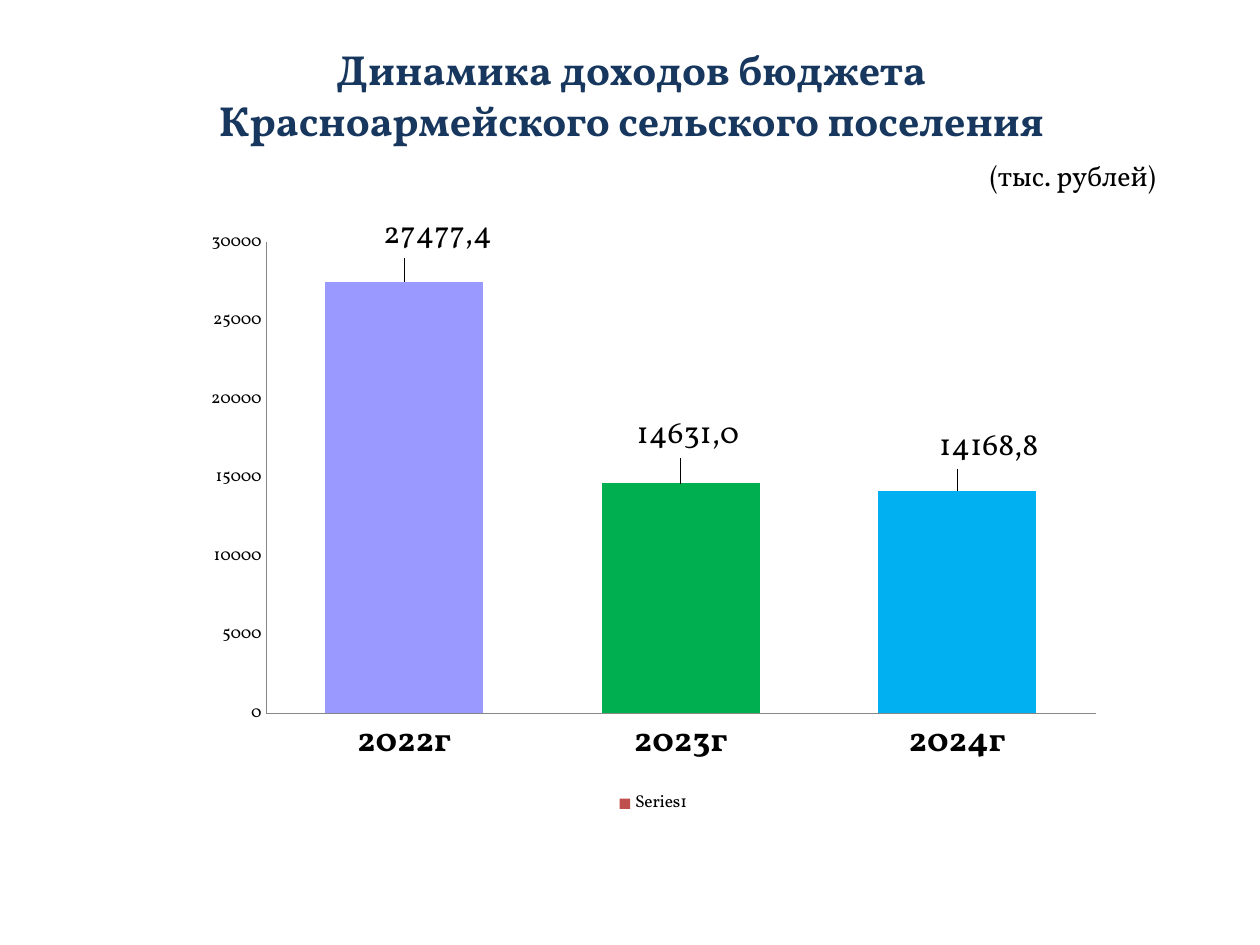
import pptx
import pptx.chart.data
import pptx.dml.color
import pptx.enum.chart
import pptx.enum.text
import pptx.oxml
import pptx.oxml.ns
import pptx.util

Pt = pptx.util.Pt
FONT = "Vollkorn"
ALIGN = pptx.enum.text.PP_ALIGN
CHART_WIDTH, CHART_HEIGHT = 510.5, 351.4
INCOMES = [
    ("2022г", 27477, "27477,4", "9999FF", (19, -11)),
    ("2023г", 14631, "14631,0", "00B050", (4, -12)),
    ("2024г", 14169, "14168,8", "00B0F0", (18, -9.5)),
]
NO_LEADER_LINES = (
    f'<c:extLst {pptx.oxml.ns.nsdecls("c")}>'
    '<c:ext uri="{CE6537A1-D6FC-4f65-9D91-7224C49458BB}" '
    'xmlns:c15="http://schemas.microsoft.com/office/drawing/2012/chart">'
    '<c15:showLeaderLines val="0"/></c:ext></c:extLst>'
)


def color(value):
    return pptx.dml.color.RGBColor.from_string(value)


def paint(fill, value):
    fill.solid()
    fill.fore_color.rgb = color(value)


def style_font(font, size, ink="000000", bold=False):
    font.name = FONT
    font.size = Pt(size)
    font.bold = bold
    font.color.rgb = color(ink)


def add_text(slide, text, box, align, spacing=None, **font_format):
    frame = slide.shapes.add_textbox(*map(Pt, box)).text_frame
    frame.word_wrap = True
    frame.vertical_anchor = pptx.enum.text.MSO_ANCHOR.MIDDLE
    frame.margin_top = frame.margin_bottom = 0
    paragraph = frame.paragraphs[0]
    paragraph.text = text
    paragraph.alignment = align
    if spacing:
        paragraph.line_spacing = Pt(spacing)
    for run in paragraph.runs:
        style_font(run.font, **font_format)


def place(anchor, left, top, width=None, height=None, **modes):
    for old_layout in anchor.getparent().xpath("c:layout"):
        old_layout.getparent().remove(old_layout)
    settings = dict(modes, x=left / CHART_WIDTH, y=top / CHART_HEIGHT)
    if width:
        settings.update(w=width / CHART_WIDTH, h=height / CHART_HEIGHT)
    parts = "".join(f'<c:{key} val="{value}"/>' for key, value in settings.items())
    return pptx.oxml.parse_xml(
        f'<c:layout {pptx.oxml.ns.nsdecls("c")}>'
        f"<c:manualLayout>{parts}</c:manualLayout></c:layout>"
    )


def style_axis(axis, size, bold=False):
    axis.has_major_gridlines = False
    axis.major_tick_mark = pptx.enum.chart.XL_TICK_MARK.NONE
    axis.minor_tick_mark = pptx.enum.chart.XL_TICK_MARK.NONE
    axis.format.line.color.rgb = color("878787")
    axis.format.line.width = Pt(0.75)
    style_font(axis.tick_labels.font, size, bold=bold)


def label_bar(point, text, offset):
    label = point.data_label
    label.position = pptx.enum.chart.XL_LABEL_POSITION.OUTSIDE_END
    run = label.text_frame.paragraphs[0].add_run()
    run.text = text
    style_font(run.font, 18)
    index = run._r.xpath("ancestor::c:dLbl/c:idx")[0]
    index.addnext(place(index, *offset))


def add_income_chart(slide, left, top):
    incomes = pptx.chart.data.CategoryChartData()
    incomes.categories = [income[0] for income in INCOMES]
    incomes.add_series("Series1", [income[1] for income in INCOMES])
    kind = pptx.enum.chart.XL_CHART_TYPE.COLUMN_CLUSTERED
    box = map(Pt, (left, top, CHART_WIDTH, CHART_HEIGHT))
    chart = slide.shapes.add_chart(kind, *box, incomes).chart
    chart.has_title = False
    style_font(chart.font, 10)
    chart.has_legend = True
    chart.legend.position = pptx.enum.chart.XL_LEGEND_POSITION.BOTTOM
    chart.legend.include_in_layout = False
    style_axis(chart.category_axis, 20, bold=True)
    style_axis(chart.value_axis, 10)
    chart.value_axis.minimum_scale = 0
    chart.value_axis.maximum_scale = 30000
    chart.value_axis.major_unit = 5000

    columns = chart.plots[0]
    columns.gap_width = 75
    columns.vary_by_categories = False
    series = columns.series[0]
    paint(series.format.fill, "C0504D")
    series.data_labels.show_value = True
    for position, (_, _, text, fill, offset) in enumerate(INCOMES):
        point = series.points[position]
        paint(point.format.fill, fill)
        label_bar(point, text, offset)
    labels = chart.element.xpath(".//c:ser/c:dLbls")[0]
    for leader_setting in labels.xpath("c:showLeaderLines"):
        labels.remove(leader_setting)
    labels.append(pptx.oxml.parse_xml(NO_LEADER_LINES))

    first_plot = chart.element.xpath(".//c:plotArea/c:barChart")[0]
    first_plot.addprevious(place(
        first_plot, 36.2, 9.5, 474.3, 274.5,
        layoutTarget="inner", xMode="edge", yMode="edge",
    ))
    legend_position = chart.element.xpath(".//c:legend/c:legendPos")[0]
    legend_position.addnext(place(
        legend_position, 235, 327, xMode="edge", yMode="edge",
    ))


def main():
    deck = pptx.Presentation()
    deck.slide_width, deck.slide_height = Pt(720), Pt(540)
    slide = deck.slides.add_slide(deck.slide_layouts[6])
    add_text(
        slide, "Динамика доходов бюджета\vКрасноармейского сельского поселения",
        (36.7, 24.7, 648, 58), ALIGN.CENTER, spacing=29,
        size=24, ink="17375E", bold=True,
    )
    add_text(slide, "(тыс. рублей)", (516.5, 88.4, 151, 24), ALIGN.RIGHT, size=16)
    add_income_chart(slide, 116, 122.4)
    deck.save("out.pptx")


main()
